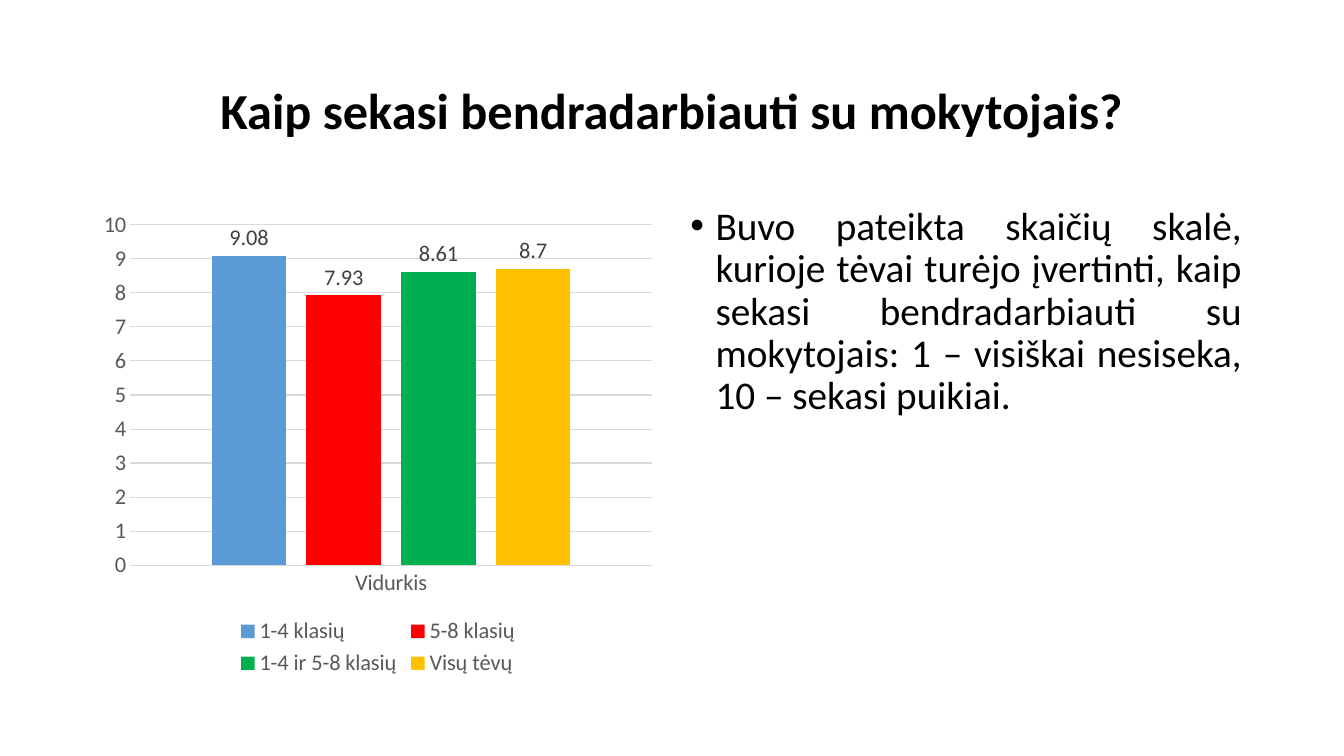
"""Builds a slide with a column chart of average ratings and an explanatory bullet."""
from lxml import etree
from pptx import Presentation
from pptx.chart.data import CategoryChartData
from pptx.dml.color import RGBColor
from pptx.enum import chart as ch, text
from pptx.oxml.ns import qn
from pptx.util import Pt

BLACK = RGBColor(0x00, 0x00, 0x00)
LABEL = RGBColor(0x40, 0x40, 0x40)
GRAY = RGBColor(0x59, 0x59, 0x59)
GRID = RGBColor(0xD9, 0xD9, 0xD9)
BLUE = RGBColor(0x5B, 0x9B, 0xD5)
RED = RGBColor(0xFF, 0x00, 0x00)
GREEN = RGBColor(0x00, 0xB0, 0x50)
AMBER = RGBColor(0xFF, 0xC0, 0x00)

FONT = "Calibri"
LEFT, TOP, COLUMN_W, COLUMN_H = 66, 144, 408, 342.75
GUTTER = 12
TITLE = "Kaip sekasi bendradarbiauti su mokytojais?"
EXPLANATION = ("Buvo pateikta skaičių skalė, kurioje tėvai turėjo įvertinti, kaip sekasi "
               "bendradarbiauti su mokytojais: 1 – visiškai nesiseka, 10 – sekasi puikiai.")
RATINGS = [
    ("1-4 klasių ", 9.08, BLUE),
    ("5-8 klasių", 7.93, RED),
    ("1-4 ir 5-8 klasių", 8.61, GREEN),
    ("Visų tėvų", 8.7, AMBER),
]


def set_font(font, size, color, bold=False):
    """Apply the slide typeface with a size, colour and weight."""
    font.name, font.size, font.bold = FONT, Pt(size), bold
    font.color.rgb = color


def set_line(line, color):
    """Draw a thin line in the given colour."""
    line.color.rgb, line.width = color, Pt(0.75)


def place(sp, left, top, width, height):
    """Move and size a shape, in points."""
    sp.left, sp.top, sp.width, sp.height = Pt(left), Pt(top), Pt(width), Pt(height)


def add_title(s):
    """Fill and format the title placeholder."""
    sp = s.shapes.title
    place(sp, LEFT, 28.75, 2 * COLUMN_W + GUTTER, 104.4)
    tf = sp.text_frame
    tf.text, tf.word_wrap = TITLE, True
    tf.auto_size = text.MSO_AUTO_SIZE.NONE
    tf.vertical_anchor = text.MSO_ANCHOR.MIDDLE
    p = tf.paragraphs[0]
    p.alignment, p.line_spacing = text.PP_ALIGN.CENTER, 0.9
    set_font(p.font, 36, BLACK, True)


def add_bullet(s, left):
    """Add the justified, bulleted explanation."""
    tf = s.shapes.add_textbox(Pt(left), Pt(TOP), Pt(COLUMN_W), Pt(COLUMN_H)).text_frame
    tf.text, tf.word_wrap = EXPLANATION, True
    p = tf.paragraphs[0]
    p.alignment, p.line_spacing, p.space_before = text.PP_ALIGN.JUSTIFY, 0.9, Pt(10)
    set_font(p.font, 28, BLACK)
    pPr = p._p.get_or_add_pPr()
    pPr.set("marL", str(Pt(18)))
    pPr.set("indent", str(-Pt(18)))
    bullet_font = etree.Element(qn("a:buFont"), typeface="Arial")
    bullet = etree.Element(qn("a:buChar"), char="•")
    pPr.find(qn("a:spcBef")).addnext(bullet_font)
    bullet_font.addnext(bullet)


def format_axes(chart):
    """Style the category and value axes."""
    for axis in (chart.category_axis, chart.value_axis):
        axis.major_tick_mark = axis.minor_tick_mark = ch.XL_TICK_MARK.NONE
        set_font(axis.tick_labels.font, 16, GRAY)
    set_line(chart.category_axis.format.line, GRID)
    axis = chart.value_axis
    axis.format.line.fill.background()
    axis.minimum_scale, axis.maximum_scale, axis.major_unit = 0, 10, 1
    axis.has_major_gridlines = True
    set_line(axis.major_gridlines.format.line, GRID)


def add_rating_chart(s):
    """Add the clustered columns with one series per group."""
    data = CategoryChartData()
    data.categories = ["Vidurkis"]
    for name, value, _ in RATINGS:
        data.add_series(name, [value])
    chart = s.shapes.add_chart(ch.XL_CHART_TYPE.COLUMN_CLUSTERED, Pt(LEFT), Pt(TOP),
                               Pt(COLUMN_W), Pt(COLUMN_H), data).chart
    set_font(chart.font, 10, BLACK)
    chart.has_title = False
    chart.has_legend = True
    chart.legend.position = ch.XL_LEGEND_POSITION.BOTTOM
    chart.legend.include_in_layout = False
    set_font(chart.legend.font, 16, GRAY)
    format_axes(chart)
    plot = chart.plots[0]
    plot.gap_width, plot.overlap, plot.vary_by_categories = 219, -27, False
    for series, (_, _, color) in zip(plot.series, RATINGS):
        series.format.fill.solid()
        series.format.fill.fore_color.rgb = color
        labels = series.data_labels
        labels.show_value = True
        labels.position = ch.XL_LABEL_POSITION.OUTSIDE_END
        set_font(labels.font, 16, LABEL)


def main():
    """Build and save the presentation."""
    prs = Presentation()
    prs.slide_width, prs.slide_height = Pt(960), Pt(540)
    s = prs.slides.add_slide(prs.slide_layouts[5])
    add_title(s)
    add_rating_chart(s)
    add_bullet(s, LEFT + COLUMN_W + GUTTER)
    prs.save("out.pptx")


if __name__ == "__main__":
    main()
